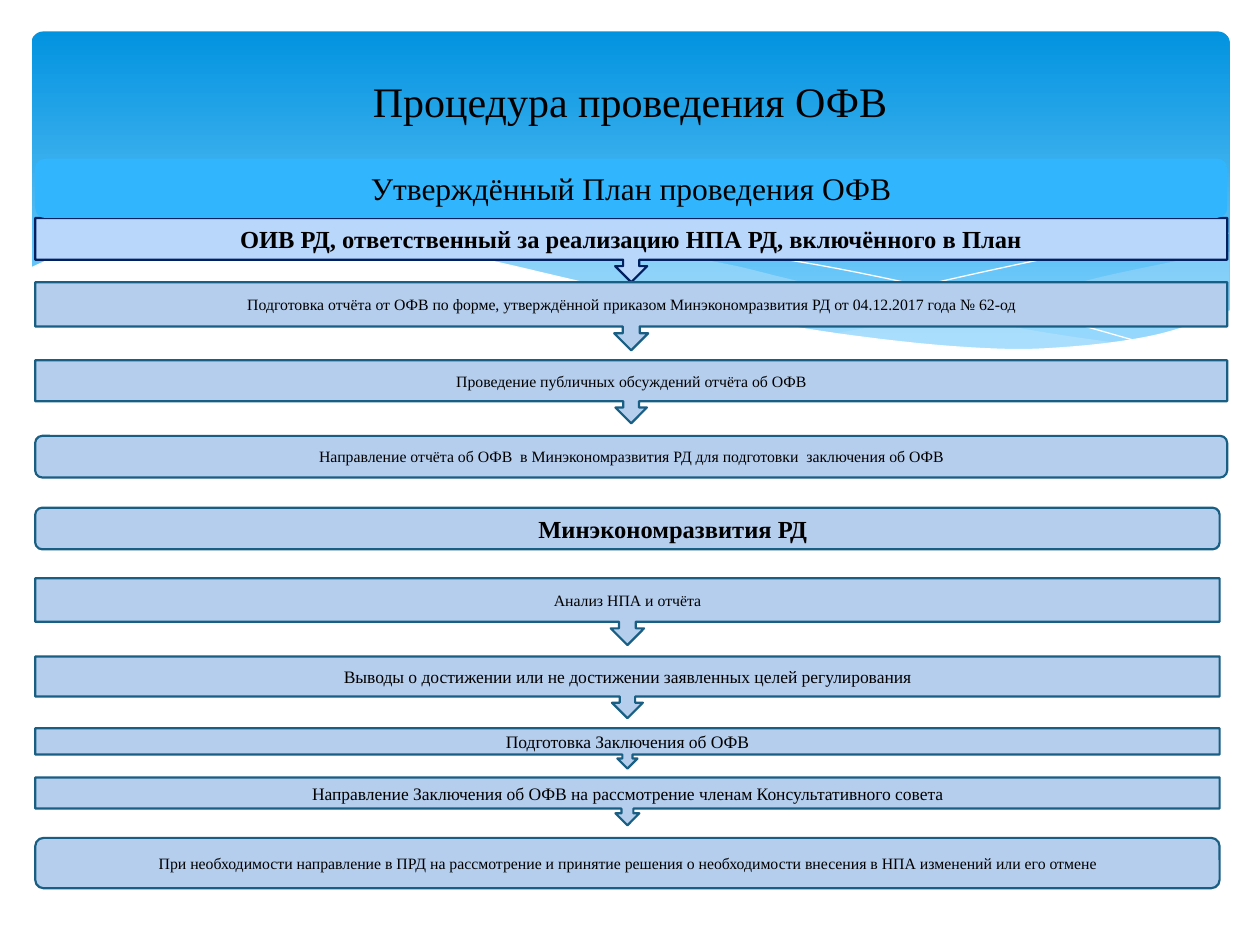
from itertools import chain
from lxml import etree
from pptx import Presentation
from pptx.dml.color import RGBColor
from pptx.enum.shapes import MSO_SHAPE
from pptx.enum.text import MSO_ANCHOR, PP_ALIGN
from pptx.oxml.ns import qn
from pptx.util import Inches, Pt

ROUNDED = MSO_SHAPE.ROUNDED_RECTANGLE
CALLOUT = MSO_SHAPE.DOWN_ARROW_CALLOUT
CENTER = PP_ALIGN.CENTER
MIDDLE = MSO_ANCHOR.MIDDLE
TITLE_ONLY = 5
COLUMNS, ROWS = 100, 75
FONT = "Times New Roman"
COLORS = {
    "text": "000000", "white": "FFFFFF", "wave": "C6E7FC",
    "band_top": "0293E0", "band_bottom": "83D3FE", "plan": "31B6FD",
    "owner": "B9D6FB", "owner_line": "002060",
    "step": "B5CEED", "step_line": "195F84",
}


def color(name):
    return RGBColor.from_string(COLORS[name])


def write_text(shape, text, size=9, bold=False, indent=0.1):
    frame = shape.text_frame
    frame.word_wrap = True
    frame.vertical_anchor = MIDDLE
    frame.margin_left = Inches(indent)
    paragraph = frame.paragraphs[0]
    paragraph.alignment = CENTER
    run = paragraph.add_run()
    run.text = text
    run.font.name, run.font.size, run.font.bold = FONT, Pt(size), bold
    run.font.color.rgb = color("text")


def smooth(points, steps=6):
    """Catmull-Rom curve through the points."""
    padded = [points[0], *points, points[-1]]
    curve = [points[0]]
    for a, b, c, d in zip(padded, padded[1:], padded[2:], padded[3:]):
        for step in range(1, steps + 1):
            t = step / steps
            curve.append(tuple(
                (2 * q + (r - p) * t + (2 * p - 5 * q + 4 * r - s) * t ** 2
                 + (3 * q - p - 3 * r + s) * t ** 3) / 2
                for p, q, r, s in zip(a, b, c, d)))
    return curve


class SlideBuilder:
    def __init__(self, presentation):
        self.slide = presentation.slides.add_slide(presentation.slide_layouts[TITLE_ONLY])
        self.shapes = self.slide.shapes
        self.column = presentation.slide_width / COLUMNS
        self.row = presentation.slide_height / ROWS

    def place(self, x, y):
        return round(x * self.column), round(y * self.row)

    def paint(self, shape, fill=None, line=None, width=1.25, opacity=None):
        shape.shadow.inherit = False
        if fill:
            shape.fill.solid()
            shape.fill.fore_color.rgb = color(fill)
        else:
            shape.fill.background()
        if opacity:
            tint = shape.fill._xPr.find(".//" + qn("a:srgbClr"))
            etree.SubElement(tint, qn("a:alpha"), val=str(opacity * 1000))
        if line:
            shape.line.color.rgb = color(line)
            shape.line.width = Pt(width)
        else:
            shape.line.fill.background()

    def title(self, text, left, top, width, height, **text_format):
        title = self.shapes.title
        title.left, title.top = self.place(left, top)
        title.width, title.height = self.place(width, height)
        write_text(title, text, **text_format)
        # Bring the title in front of the header band
        self.shapes._spTree.append(title._element)

    def band(self, left, top, width, height):
        shape = self.shapes.add_shape(
            ROUNDED, *self.place(left, top), *self.place(width, height))
        self.paint(shape)
        shape.adjustments[0] = 0.034
        shape.fill.gradient()
        shape.fill.gradient_angle = 270
        for stop, position, name in zip(
                shape.fill.gradient_stops, (0, 0.9), ("band_top", "band_bottom")):
            stop.position = position
            stop.color.rgb = color(name)

    def curve(self, *edges, corners=(), **style):
        """Outline of smooth edges plus straight corners; open if it is only a line."""
        points = [self.place(*point) for point in chain(*map(smooth, edges), corners)]
        builder = self.shapes.build_freeform(*points[0], scale=1.0)
        builder.add_line_segments(points[1:], close="fill" in style)
        self.paint(builder.convert_to_shape(), **style)

    def box(self, kind, text, top, height, width, fill="step", line="step_line",
            **text_format):
        shape = self.shapes.add_shape(
            kind, *self.place(2.8, top), *self.place(width, height))
        self.paint(shape, fill, line)
        write_text(shape, text, **text_format)


def draw_background(builder):
    builder.band(2.5, 2.5, 95.1, 27)
    # Translucent waves
    builder.curve(
        [(97.6, 20), (93.5, 20.7), (89.1, 21.6), (86.1, 22.3), (80.5, 23.7),
         (75.3, 24.8), (70.6, 25.7), (66.1, 26.5)],
        [(66.1, 26.5), (70.5, 27.1), (74.5, 27.5), (78.1, 27.7), (81.4, 27.8),
         (85.4, 27.6), (88.9, 27.2), (92.1, 26.5), (94.9, 25.7), (97.6, 24.7)],
        fill="wave", opacity=29)
    builder.curve(
        [(89.3, 27.3), (83.7, 26.5), (77.5, 25.4), (70.6, 24), (62.9, 22.2),
         (58.4, 21.1), (54.1, 20.3), (50.2, 19.6), (46.5, 19.1), (42, 18.7),
         (38, 18.5), (34.4, 18.6), (31.3, 18.8), (28.6, 19.1)],
        [(28.6, 19.1), (34.2, 19.9), (40.4, 21.1), (44.9, 22.2), (53, 24),
         (60.1, 25.5), (66.5, 26.6), (72.2, 27.4), (77.3, 27.7), (81.8, 27.8),
         (85.7, 27.7), (89.3, 27.3)],
        fill="wave", opacity=40)
    # Hairlines
    builder.curve(
        [(30.9, 19.5), (34.4, 19), (38.7, 18.7), (43.3, 18.7), (48.9, 19),
         (55.6, 19.7), (63.6, 20.8), (72.7, 22.6), (83.1, 25.1), (90.7, 27.2)],
        line="white", width=0)
    builder.curve(
        [(61.3, 25.7), (67.2, 24.1), (74.8, 22.3), (83.6, 20.4), (89.5, 19.4),
         (93.8, 18.8), (97.5, 18.5)],
        line="white", width=0)
    # White page edge below the band
    builder.curve(
        [(97.7, 24.6), (95, 25.6), (92, 26.5), (88.7, 27.1), (85, 27.5),
         (80.9, 27.7), (76.1, 27.5), (70.8, 27), (64.8, 26.2), (57.9, 25),
         (50.3, 23.3), (44.7, 22), (39.1, 20.7), (34, 19.7), (29.2, 19),
         (25, 18.6), (21.1, 18.4), (17.7, 18.4), (14.6, 18.5), (11.9, 18.7),
         (9.5, 19.1), (7.6, 19.5), (5.2, 20.1), (3.6, 20.7), (2.3, 21.3)],
        corners=[(2.3, 32.9), (97.7, 32.9)], fill="white")


def main():
    presentation = Presentation()
    presentation.slide_width, presentation.slide_height = Inches(10), Inches(7.5)
    builder = SlideBuilder(presentation)
    draw_background(builder)
    builder.title("Процедура проведения ОФВ", 5, 3.7, 90, 8.6, size=24)

    # Stage one: the responsible authority
    wide = 94.6
    builder.box(CALLOUT, "ОИВ РД, ответственный за реализацию НПА РД, включённого в План",
                17.3, 5.1, wide, "owner", "owner_line", size=14, bold=True)
    builder.box(ROUNDED, "Утверждённый План проведения ОФВ",
                12.6, 4.7, wide, "plan", None, size=18)
    builder.box(CALLOUT, "Подготовка отчёта от ОФВ по форме, утверждённой приказом "
                "Минэкономразвития РД от 04.12.2017 года № 62-од", 22.4, 5.4, wide)
    builder.box(CALLOUT, "Проведение публичных обсуждений отчёта об ОФВ", 28.6, 5, wide)
    builder.box(ROUNDED, "Направление отчёта об ОФВ  в Минэкономразвития РД "
                "для подготовки  заключения об ОФВ", 34.6, 3.3, wide)

    # Stage two: the ministry
    narrow = 94
    builder.box(ROUNDED, "Минэкономразвития РД", 40.3, 3.3, narrow,
                size=14, bold=True, indent=0.82)
    builder.box(CALLOUT, "Анализ НПА и отчёта", 45.9, 5.3, narrow)
    for text, top, height in (
            ("Выводы о достижении или не достижении заявленных целей регулирования",
             52.1, 4.9),
            ("Подготовка Заключения об ОФВ", 57.8, 3.2),
            ("Направление Заключения об ОФВ на рассмотрение членам Консультативного совета",
             61.7, 3.8)):
        builder.box(CALLOUT, text, top, height, narrow, size=10)
    builder.box(ROUNDED, "При необходимости направление в ПРД на рассмотрение и принятие "
                "решения о необходимости внесения в НПА изменений или его отмене",
                66.5, 4, narrow)
    presentation.save("out.pptx")


if __name__ == "__main__":
    main()
